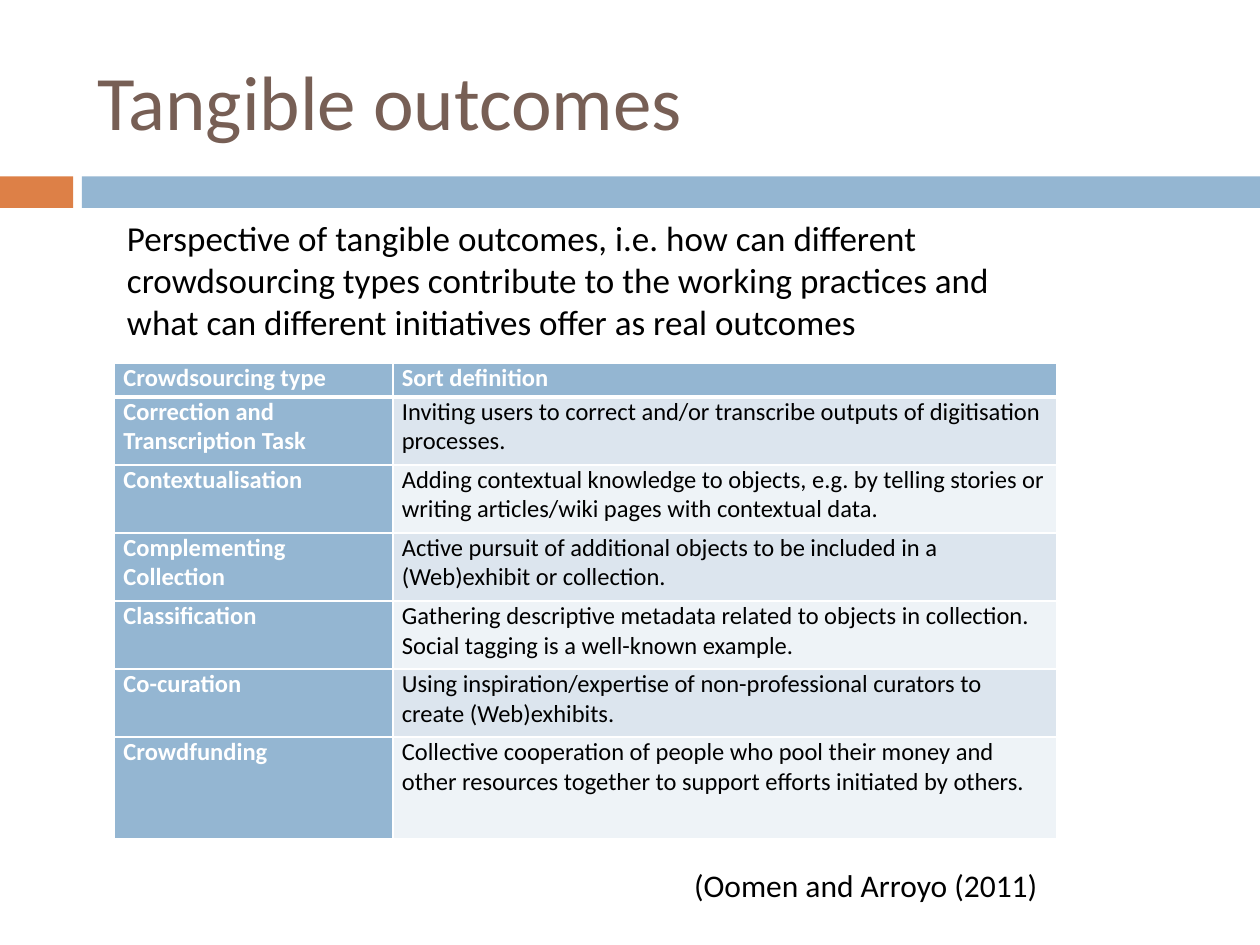
from lxml import etree
from pptx import Presentation
from pptx.dml.color import RGBColor
from pptx.enum import shapes, text
from pptx.oxml.ns import qn
from pptx.util import Inches, Pt

FONT = "Calibri"
BROWN = RGBColor(0x77, 0x5F, 0x55)
ORANGE = RGBColor(0xDD, 0x80, 0x47)
BLUE = RGBColor(0x94, 0xB6, 0xD2)
BANDS = RGBColor(0xDC, 0xE5, 0xEE), RGBColor(0xEE, 0xF3, 0xF7)
WHITE = RGBColor(0xFF, 0xFF, 0xFF)
BLACK = RGBColor(0, 0, 0)

COLUMNS = [2.21, 5.27]
ROW_HEIGHTS = [0.27] + [0.54] * 5 + [0.81]
ROWS = [
    ("Crowdsourcing type", "Sort definition"),
    ("Correction and Transcription Task",
     "Inviting users to correct and/or transcribe outputs of digitisation processes."),
    ("Contextualisation",
     "Adding contextual knowledge to objects, e.g. by telling stories or "
     "writing articles/wiki pages with contextual data."),
    ("Complementing\nCollection",
     "Active pursuit of additional objects to be included in a (Web)exhibit or collection."),
    ("Classification",
     "Gathering descriptive metadata related to objects in collection. "
     "Social tagging is a well-known example."),
    ("Co-curation",
     "Using inspiration/expertise of non-professional curators to create (Web)exhibits."),
    ("Crowdfunding",
     "Collective cooperation of people who pool their money and other resources "
     "together to support efforts initiated by others."),
]


def write(tf, words, size, color, bold=False, align=text.PP_ALIGN.LEFT):
    tf.text = words
    tf.word_wrap = True
    for p in tf.paragraphs:
        p.alignment = align
        p.font.name = FONT
        p.font.size = Pt(size)
        p.font.bold = bold
        p.font.color.rgb = color


def add_title(s, words, left, top, width, height):
    sp = s.shapes.title
    sp.left, sp.top, sp.width, sp.height = map(Inches, (left, top, width, height))
    sp.text_frame.vertical_anchor = text.MSO_ANCHOR.MIDDLE
    write(sp.text_frame, words, 44, BROWN)


def add_divider(s, left, top, width, height):
    accent, gap = 0.58, 0.07
    bar_left = left + accent + gap
    for x, w, color in ((left, accent, ORANGE),
                        (bar_left, left + width - bar_left, BLUE)):
        sp = s.shapes.add_shape(shapes.MSO_SHAPE.RECTANGLE,
                                *map(Inches, (x, top, w, height)))
        sp.shadow.inherit = False
        sp.fill.solid()
        sp.fill.fore_color.rgb = color
        sp.line.fill.background()


def add_text(s, words, size, left, top, width, height, align=text.PP_ALIGN.LEFT):
    sp = s.shapes.add_textbox(*map(Inches, (left, top, width, height)))
    write(sp.text_frame, words, size, BLACK, align=align)


def set_borders(cell, widths):
    tc_pr = cell._tc.get_or_add_tcPr()
    for i, (side, width) in enumerate(widths.items()):
        ln = etree.Element(qn(f"a:ln{side}"), w=str(Pt(width)))
        fill = etree.SubElement(ln, qn("a:solidFill"))
        etree.SubElement(fill, qn("a:srgbClr"), val=str(WHITE))
        tc_pr.insert(i, ln)


def add_outcomes_table(s, left, top, width, height):
    table = s.shapes.add_table(len(ROWS), len(COLUMNS),
                               *map(Inches, (left, top, width, height))).table
    for column, w in zip(table.columns, COLUMNS):
        column.width = Inches(w)
    for r, (row, h) in enumerate(zip(table.rows, ROW_HEIGHTS)):
        row.height = Inches(h)
        for c, cell in enumerate(row.cells):
            heading = r == 0 or c == 0
            cell.margin_left = cell.margin_right = Inches(0.07)
            cell.margin_top = cell.margin_bottom = 0
            cell.fill.solid()
            cell.fill.fore_color.rgb = BLUE if heading else BANDS[(r - 1) % 2]
            write(cell.text_frame, ROWS[r][c], 14, WHITE if heading else BLACK, heading)
            set_borders(cell, {"L": 1, "R": 1, "T": 3 if r == 1 else 1,
                               "B": 3 if r == 0 else 1})


def main():
    prs = Presentation()
    prs.slide_width, prs.slide_height = Inches(10), Inches(7.5)
    s = prs.slides.add_slide(prs.slide_layouts[5])
    add_divider(s, 0, 1.4, 10, 0.25)
    add_title(s, "Tangible outcomes", 0.67, 0.25, 8.92, 1.08)
    add_outcomes_table(s, 0.91, 2.88, sum(COLUMNS), sum(ROW_HEIGHTS))
    add_text(s, "Perspective of tangible outcomes, i.e. how can different crowdsourcing "
             "types contribute to the working practices and what can different "
             "initiatives offer as real outcomes", 20, 0.91, 1.67, 7.64, 1.11)
    add_text(s, "(Oomen and Arroyo (2011) ", 18, 5.08, 6.82, 3.31, 0.71,
             text.PP_ALIGN.RIGHT)
    prs.save("out.pptx")


if __name__ == "__main__":
    main()
